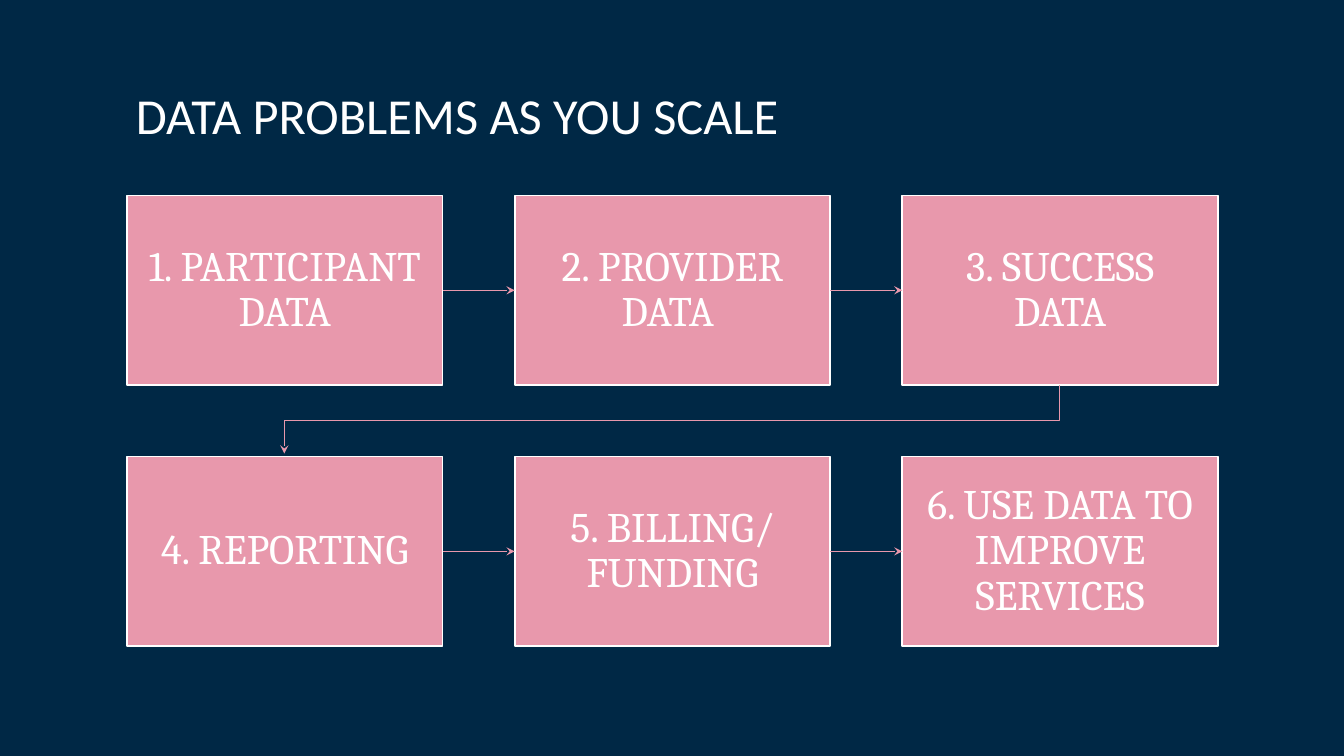
from pptx import Presentation
from pptx.dml.color import RGBColor
from pptx.enum.shapes import MSO_CONNECTOR, MSO_SHAPE
from pptx.enum.text import MSO_ANCHOR, PP_ALIGN
from pptx.oxml.ns import qn
from pptx.util import Inches, Pt
from lxml.etree import SubElement

NAVY = RGBColor(0x00, 0x28, 0x45)
PINK = RGBColor(0xE8, 0x98, 0xAC)
WHITE = RGBColor(0xFF, 0xFF, 0xFF)

STEPS = [
    "1. PARTICIPANT DATA", "2. PROVIDER DATA ", "3. SUCCESS DATA",
    "4. REPORTING", "5. BILLING/\nFUNDING", "6. USE DATA TO IMPROVE SERVICES",
]
COLUMNS = 3
LEFT, TOP = 1.26, 1.94
WIDTH, HEIGHT = 3.13, 1.88
STEP_X, STEP_Y = 3.845, 2.59


def write_text(shape, text, *, font, size, align, anchor, inset_x, inset_y):
    frame = shape.text_frame
    frame.word_wrap = True
    frame.vertical_anchor = anchor
    frame.margin_left = frame.margin_right = Inches(inset_x)
    frame.margin_top = frame.margin_bottom = Inches(inset_y)
    paragraph = frame.paragraphs[0]
    paragraph.text = text
    paragraph.alignment = align
    paragraph.line_spacing = 0.9
    for run in paragraph.runs:
        run.font.name = font
        run.font.size = Pt(size)
        run.font.color.rgb = WHITE


def style_arrow(arrow):
    arrow.line.color.rgb = PINK
    arrow.line.width = Pt(0.75)
    properties = arrow._element.spPr
    SubElement(properties.find(qn("a:ln")), qn("a:tailEnd"), type="stealth")
    if properties.find(qn("a:effectLst")) is None:
        SubElement(properties, qn("a:effectLst"))


presentation = Presentation()
presentation.slide_width = Inches(13.33)
presentation.slide_height = Inches(7.5)
slide = presentation.slides.add_slide(presentation.slide_layouts[6])
slide.background.fill.solid()
slide.background.fill.fore_color.rgb = NAVY

title = slide.shapes.add_textbox(Inches(1.25), Inches(0.64), Inches(10.83), Inches(0.85))
write_text(title, "DATA PROBLEMS AS YOU SCALE", font="Calibri", size=36,
           align=PP_ALIGN.LEFT, anchor=MSO_ANCHOR.BOTTOM, inset_x=0.1, inset_y=0.05)

boxes = []
for index, step in enumerate(STEPS):
    row, column = divmod(index, COLUMNS)
    box = slide.shapes.add_shape(
        MSO_SHAPE.RECTANGLE, Inches(LEFT + column * STEP_X), Inches(TOP + row * STEP_Y),
        Inches(WIDTH), Inches(HEIGHT))
    box.shadow.inherit = False
    box.fill.solid()
    box.fill.fore_color.rgb = PINK
    box.line.color.rgb = WHITE
    box.line.width = Pt(1.25)
    write_text(box, step, font="Cambria", size=30, align=PP_ALIGN.CENTER,
               anchor=MSO_ANCHOR.MIDDLE, inset_x=0.15, inset_y=0.16)
    if column > 0:
        arrow = slide.shapes.add_connector(MSO_CONNECTOR.STRAIGHT, 0, 0, 0, 0)
        arrow.begin_connect(boxes[-1], 3)
        arrow.end_connect(box, 1)
        style_arrow(arrow)
    boxes.append(box)

start_x, end_x = Inches(10.51), Inches(2.82)
turn_y = Inches(4.17)
builder = slide.shapes.build_freeform(start_x, Inches(TOP + HEIGHT))
builder.add_line_segments(
    [(start_x, turn_y), (end_x, turn_y), (end_x, Inches(4.5))], close=False)
row_arrow = builder.convert_to_shape()
row_arrow.fill.background()
row_arrow.shadow.inherit = False
style_arrow(row_arrow)

presentation.save("out.pptx")
